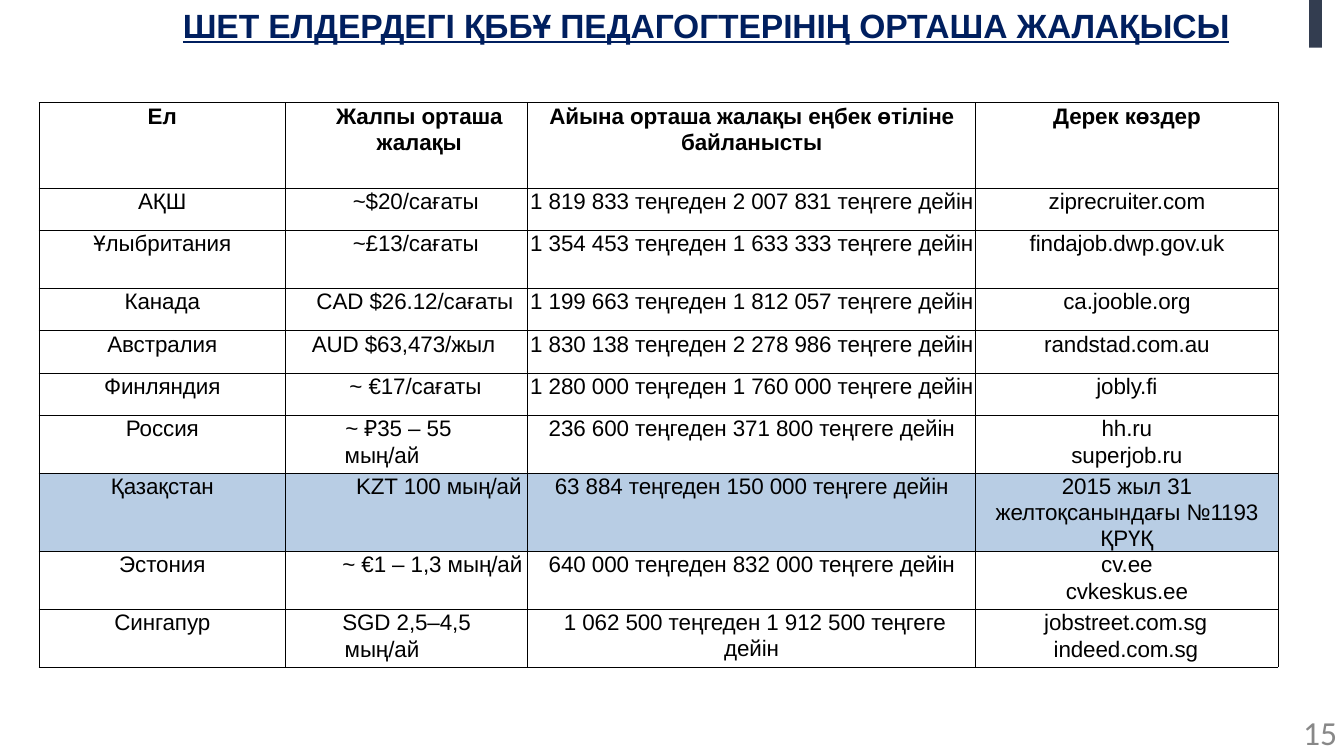
from lxml import etree
from pptx import Presentation, util as u
from pptx.dml.color import RGBColor
from pptx.enum import shapes, text
from pptx.oxml.ns import qn

W, H = 20, 11.25
TITLE = "ШЕТ ЕЛДЕРДЕГІ ҚББҰ ПЕДАГОГТЕРІНІҢ ОРТАША ЖАЛАҚЫСЫ"
HEAD = ["Ел", "Жалпы орташа жалақы",
        "Айына орташа жалақы еңбек өтіліне байланысты", "Дерек көздер"]
ROWS = [
    ["АҚШ", "~$20/сағаты", "1 819 833 теңгеден 2 007 831 теңгеге дейін", "ziprecruiter.com"],
    ["Ұлыбритания", "~£13/сағаты", "1 354 453 теңгеден 1 633 333 теңгеге дейін", "findajob.dwp.gov.uk"],
    ["Канада", "CAD $26.12/сағаты", "1 199 663 теңгеден 1 812 057 теңгеге дейін", "ca.jooble.org"],
    ["Австралия", "AUD $63,473/жыл", "1 830 138 теңгеден 2 278 986 теңгеге дейін", "randstad.com.au"],
    ["Финляндия", "~ €17/сағаты", "1 280 000 теңгеден 1 760 000 теңгеге дейін", "jobly.fi"],
    ["Россия", "~ ₽35 – 55\nмың/ай", "236 600 теңгеден 371 800 теңгеге дейін", "hh.ru\nsuperjob.ru"],
    ["Қазақстан", "KZT 100 мың/ай", "63 884 теңгеден 150 000 теңгеге дейін",
     "2015 жыл 31 желтоқсанындағы №1193 ҚРҮҚ"],
    ["Эстония", "~ €1 – 1,3 мың/ай", "640 000 теңгеден 832 000 теңгеге дейін", "cv.ee\ncvkeskus.ee"],
    ["Сингапур", "SGD 2,5–4,5\nмың/ай", " 1 062 500 теңгеден 1 912 500 теңгеге дейін",
     "jobstreet.com.sg\nindeed.com.sg"],
]
COLS = [3.67, 3.6, 6.67, 4.5]
LOW, TALL = 0.63, 0.86
HIGHS = [1.27, LOW, TALL, LOW, LOW, LOW, TALL, TALL, TALL, TALL]
MARK = 7
LEFT, MID, RIGHT = text.PP_ALIGN.LEFT, text.PP_ALIGN.CENTER, text.PP_ALIGN.RIGHT
PLACE = {
    (0, 1): [(MID, 0.38, 0)],
    (1, 1): [(LEFT, 1, 0)],
    (2, 1): [(LEFT, 1, 0)],
    (3, 1): [(LEFT, 0.46, 0)],
    (4, 1): [(LEFT, 0.39, 0)],
    (5, 1): [(LEFT, 0.95, 0)],
    (6, 1): [(LEFT, 0.89, 0), (LEFT, 0.88, 0)],
    (7, 1): [(RIGHT, 0, 0.09)],
    (7, 3): [(MID, 0.2, 0.2)],
    (8, 1): [(RIGHT, 0, 0.08)],
    (9, 1): [(MID, 0, 0), (LEFT, 0.88, 0)],
    (9, 3): [(LEFT, 1.02, 0), (LEFT, 1.16, 0)],
}


def rgb(code):
    return RGBColor.from_string(code)


def write(par, words, size, face, color, bold=False, line=False, tight=0):
    run = par.add_run()
    run.text = words
    font = run.font
    font.size, font.name, font.bold, font.underline = u.Pt(size), face, bold, line
    font.color.rgb = rgb(color)
    if tight:
        run._r.get_or_add_rPr().set("spc", str(tight))


def label(slide, box, words, **look):
    frame = slide.shapes.add_textbox(*map(u.Inches, box)).text_frame
    frame.word_wrap = True
    frame.margin_left = frame.margin_right = frame.margin_top = frame.margin_bottom = 0
    write(frame.paragraphs[0], words, **look)


def edge(cell):
    props = cell._tc.get_or_add_tcPr()
    for side in ("lnL", "lnR", "lnT", "lnB"):
        line = etree.SubElement(props, qn("a:" + side), w=str(u.Pt(1)))
        fill = etree.SubElement(line, qn("a:solidFill"))
        etree.SubElement(fill, qn("a:srgbClr"), val="000000")


def fill_cell(cell, words, row, col):
    cell.margin_left = cell.margin_right = cell.margin_top = cell.margin_bottom = 0
    edge(cell)
    if row == MARK:
        cell.fill.solid()
        cell.fill.fore_color.rgb = rgb("B8CDE4")
    else:
        cell.fill.background()
    lines = words.split("\n")
    places = PLACE.get((row, col), [(MID, 0, 0)] * len(lines))
    for i, (line, (align, left, right)) in enumerate(zip(lines, places)):
        par = cell.text_frame.add_paragraph() if i else cell.text_frame.paragraphs[0]
        par.alignment = align
        props = par._p.get_or_add_pPr()
        props.set("marL", str(u.Inches(left)))
        props.set("marR", str(u.Inches(right)))
        props.set("indent", "0")
        if i:
            par.space_before = u.Pt(1.9)
        else:
            par.line_spacing = u.Pt(28)
        write(par, line, 24, "Arial", "000000", bold=row == 0, tight=-10)


def main():
    deck = Presentation()
    deck.slide_width, deck.slide_height = u.Inches(W), u.Inches(H)
    slide = deck.slides.add_slide(deck.slide_layouts[6])

    box = (0.58, 1.53, sum(COLS), sum(HIGHS))
    grid = slide.shapes.add_table(len(HIGHS), len(COLS), *map(u.Inches, box)).table
    grid.first_row = grid.horz_banding = False
    for col, wide in zip(grid.columns, COLS):
        col.width = u.Inches(wide)
    for row, high in zip(grid.rows, HIGHS):
        row.height = u.Inches(high)
    for r, row in enumerate([HEAD] + ROWS):
        for c, words in enumerate(row):
            fill_cell(grid.cell(r, c), words, r, c)

    label(slide, (2.72, 0.07, 16.59, 0.63), TITLE, size=36, face="Arial",
          color="001F5F", bold=True, line=True, tight=-10)

    bar = slide.shapes.add_shape(shapes.MSO_SHAPE.RECTANGLE,
                                 *map(u.Inches, (19.48, 0, 0.19, 0.71)))
    bar.shadow.inherit = False
    bar.fill.solid()
    bar.fill.fore_color.rgb = rgb("333D50")
    bar.line.fill.background()

    label(slide, (19.39, 10.6, 0.72, 0.58), "15", size=36, face="Calibri", color="888888")
    deck.save("out.pptx")


if __name__ == "__main__":
    main()
